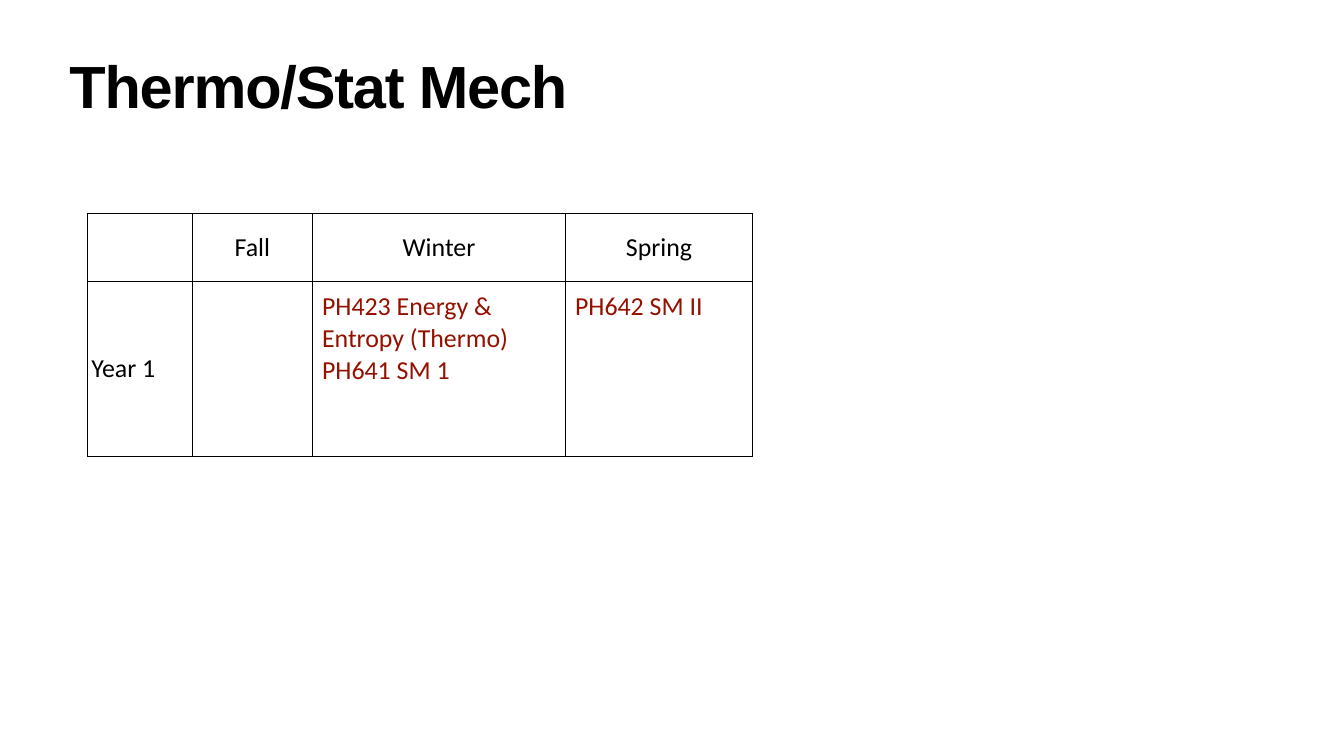
from lxml.etree import SubElement as Sub
from pptx import Presentation
from pptx.dml.color import RGBColor as Rgb
from pptx.enum.text import MSO_ANCHOR as Anchor, PP_ALIGN as Align
from pptx.oxml.ns import qn
from pptx.util import Cm, Pt

COLORS = {"ink": "000000", "course": "941100"}
WIDTHS = [5.26, 6.07, 12.75, 9.42]
HEIGHTS = [3.43, 8.79]
ROWS = [
    ["", "Fall", "Winter", "Spring"],
    ["Year 1", "", "PH423 Energy & Entropy (Thermo)\nPH641 SM 1", "PH642 SM II"],
]


def style(frame, font, size, color, align=Align.LEFT, bold=False):
    for par in frame.paragraphs:
        par.alignment = align
        for run in par.runs:
            run.font.name = font
            run.font.size = Pt(size)
            run.font.bold = bold
            run.font.color.rgb = Rgb.from_string(COLORS[color])


def add_title(slide, text):
    box = slide.shapes.add_textbox(Cm(3.35), Cm(3), Cm(61.04), Cm(3.99))
    frame = box.text_frame
    frame.word_wrap = True
    frame.vertical_anchor = Anchor.TOP
    frame.margin_left = frame.margin_right = Cm(0.15)
    frame.margin_top = frame.margin_bottom = Cm(0.15)
    frame.text = text
    style(frame, "Arial", 85, "ink", bold=True)
    par = frame.paragraphs[0]
    par.line_spacing = 0.8
    # Tighten the letters, in hundredths of a point
    par.runs[0].font._element.set("spc", "-170")


def add_borders(cell):
    props = cell._tc.get_or_add_tcPr()
    for at, side in enumerate(("lnL", "lnR", "lnT", "lnB")):
        line = Sub(props, qn(f"a:{side}"), w=str(Pt(1)))
        fill = Sub(line, qn("a:solidFill"))
        Sub(fill, qn("a:srgbClr"), val=COLORS["ink"])
        props.insert(at, line)


def fill_cell(cell, text, course, header):
    side, edge = (0.48, 0.48) if course else (0.18, 0)
    cell.margin_left = cell.margin_right = Cm(side)
    cell.margin_top = cell.margin_bottom = Cm(edge)
    cell.vertical_anchor = Anchor.TOP if course else Anchor.MIDDLE
    cell.fill.background()
    add_borders(cell)
    cell.text_frame.text = text
    style(cell.text_frame, "Calibri", 37, "course" if course else "ink",
          Align.CENTER if header else Align.LEFT)


def add_plan(slide):
    frame = slide.shapes.add_table(len(ROWS), len(WIDTHS), Cm(4.42), Cm(10.77),
                                   Cm(sum(WIDTHS)), Cm(sum(HEIGHTS)))
    table = frame.table
    table.first_row = table.horz_banding = False
    for col, width in zip(table.columns, WIDTHS):
        col.width = Cm(width)
    for row, height in zip(table.rows, HEIGHTS):
        row.height = Cm(height)
    for i, row in enumerate(ROWS):
        for j, text in enumerate(row):
            fill_cell(table.cell(i, j), text, course=i > 0 and j > 0, header=i == 0)


def main():
    deck = Presentation()
    deck.slide_width, deck.slide_height = Cm(67.73), Cm(38.1)
    slide = deck.slides.add_slide(deck.slide_layouts[6])
    # Heading
    add_title(slide, "Thermo/Stat Mech")
    # Courses by term
    add_plan(slide)
    deck.save("out.pptx")


if __name__ == "__main__":
    main()
